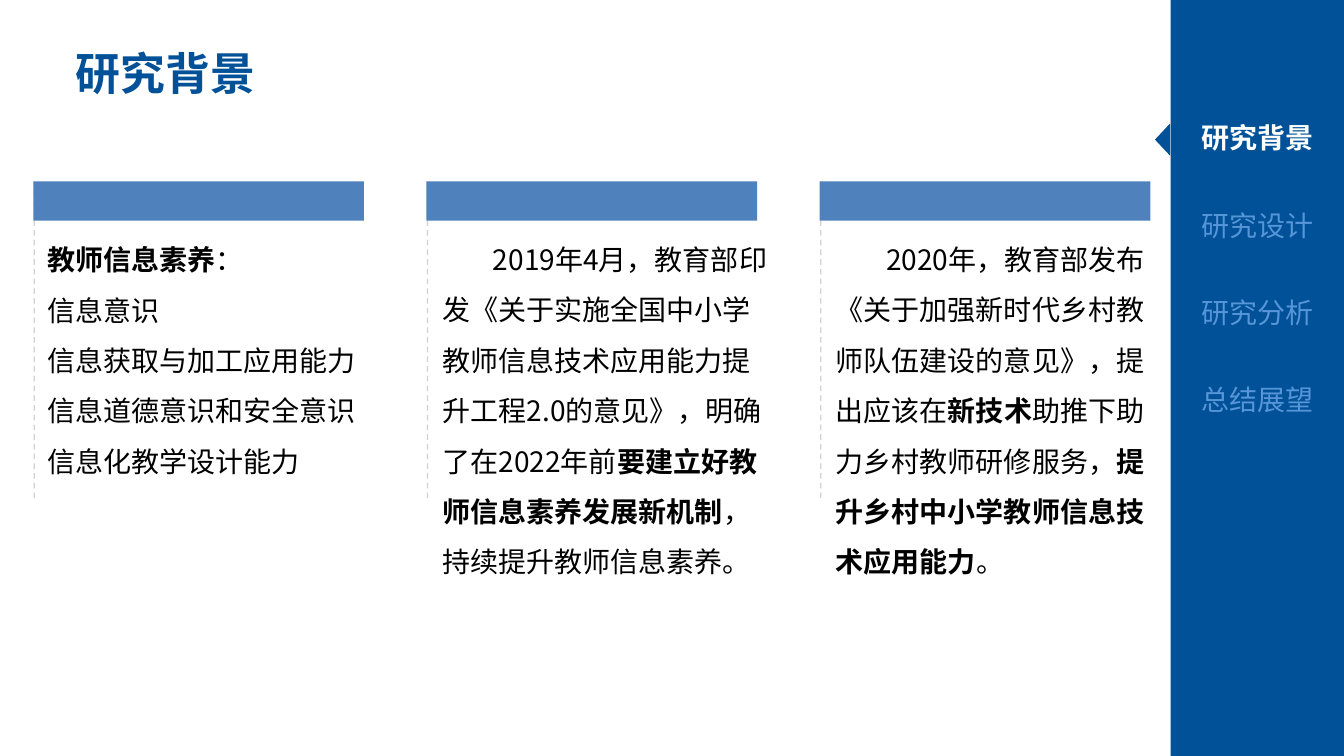
from dataclasses import dataclass

from lxml import etree
from pptx import Presentation
from pptx.dml.color import RGBColor
from pptx.enum.dml import MSO_LINE
from pptx.enum.shapes import MSO_CONNECTOR, MSO_SHAPE
from pptx.enum.text import MSO_ANCHOR, MSO_AUTO_SIZE, PP_ALIGN
from pptx.oxml.ns import qn
from pptx.util import Inches, Pt

RECTANGLE, TRIANGLE = MSO_SHAPE.RECTANGLE, MSO_SHAPE.ISOSCELES_TRIANGLE
STRAIGHT, DASH = MSO_CONNECTOR.STRAIGHT, MSO_LINE.DASH
LEFT, CENTER = PP_ALIGN.LEFT, PP_ALIGN.CENTER
TOP, MIDDLE = MSO_ANCHOR.TOP, MSO_ANCHOR.MIDDLE
NO_FIT = MSO_AUTO_SIZE.NONE


@dataclass(frozen=True)
class Theme:
    font: str = "Noto Sans CJK SC"
    navy: str = "005198"
    header: str = "4F81BD"
    muted: str = "5695D7"
    rule: str = "BFBFBF"
    white: str = "FFFFFF"
    black: str = "000000"
    title_size: int = 32
    body_size: int = 20


THEME = Theme()

SECTIONS = ["研究背景", "研究设计", "研究分析", "总结展望"]
LITERACY = [
    [("教师信息素养", True), ("：", False)],
    [("信息意识", False)],
    [("信息获取与加工应用能力", False)],
    [("信息道德意识和安全意识", False)],
    [("信息化教学设计能力", False)],
]
POLICY_2019 = [[
    ("2019年4月，教育部印发《关于实施全国中小学教师信息技术应用能力提升工程2.0的意见》，明确了在2022年前", False),
    ("要建立好教师信息素养发展新机制", True),
    ("，持续提升教师信息素养。", False),
]]
POLICY_2020 = [[
    ("2020年，教育部发布《关于加强新时代乡村教师队伍建设的意见》，提出应该在", False),
    ("新技术", True),
    ("助推下助力乡村教师研修服务，", False),
    ("提升乡村中小学教师信息技术应用能力", True),
    ("。", False),
]]


def write(frame, paragraphs, size=THEME.body_size, color=THEME.black,
          align=LEFT, anchor=TOP, spacing=1.0, indent=0):
    """Fill a text frame with paragraphs of (text, bold) runs."""
    frame.word_wrap = True
    frame.auto_size = NO_FIT
    frame.vertical_anchor = anchor
    for index, runs in enumerate(paragraphs):
        paragraph = frame.add_paragraph() if index else frame.paragraphs[0]
        properties = paragraph._p.get_or_add_pPr()
        properties.set("marL", "0")
        properties.set("indent", str(Inches(indent)))
        etree.SubElement(properties, qn("a:buNone"))
        paragraph.alignment = align
        paragraph.line_spacing = spacing
        paragraph.space_before = Pt(0)
        for text, bold in runs:
            run = paragraph.add_run()
            run.text = text
            run.font.size = Pt(size)
            run.font.bold = bold
            run.font.color.rgb = RGBColor.from_string(color)
            run.font.name = THEME.font
            east_asian = etree.SubElement(run._r.get_or_add_rPr(), qn("a:ea"))
            east_asian.set("typeface", THEME.font)


class SlideBuilder:
    """Draw themed elements on the current slide."""

    def __init__(self, slide, theme):
        self.slide = slide
        self.theme = theme

    def placeholder(self, index, box, paragraphs, **style):
        holder = self.slide.placeholders[index]
        holder.left, holder.top, holder.width, holder.height = map(Inches, box)
        write(holder.text_frame, paragraphs, **style)

    def text(self, box, paragraphs, **style):
        label = self.slide.shapes.add_textbox(*map(Inches, box))
        write(label.text_frame, paragraphs, **style)

    def block(self, kind, box, color, rotation=0):
        block = self.slide.shapes.add_shape(kind, *map(Inches, box))
        block.shadow.inherit = False
        block.fill.solid()
        block.fill.fore_color.rgb = RGBColor.from_string(color)
        block.line.fill.background()
        block.rotation = rotation

    def dashed_rule(self, x, top, bottom):
        rule = self.slide.shapes.add_connector(
            STRAIGHT, *map(Inches, (x, top, x, bottom)))
        rule.line.width = Pt(1)
        rule.line.dash_style = DASH
        rule.line.color.rgb = RGBColor.from_string(self.theme.rule)
        properties = rule._element.spPr
        color = properties.find(".//" + qn("a:srgbClr"))
        etree.SubElement(color, qn("a:alpha")).set("val", "70000")
        etree.SubElement(properties, qn("a:effectLst"))

    def sidebar(self, sections, active):
        self.block(RECTANGLE, (11.61, 0, 1.72, 7.5), self.theme.navy)
        for index, section in enumerate(sections):
            top = 1.15 + index * 0.865
            current = section == active
            color = self.theme.white if current else self.theme.muted
            if current:
                self.block(TRIANGLE, (11.37, top + 0.16, 0.32, 0.15),
                           self.theme.navy, rotation=270)
            self.text((11.71, top, 1.52, 0.44), [[(section, current)]],
                      color=color, align=CENTER)

    def column_frame(self, left):
        self.dashed_rule(left + 0.01, 1.8, 4.95)
        self.block(RECTANGLE, (left, 1.8, 3.28, 0.39), self.theme.header)


def main():
    deck = Presentation()
    deck.slide_width, deck.slide_height = Inches(13.33), Inches(7.5)
    slide = deck.slides.add_slide(deck.slide_layouts[1])
    builder = SlideBuilder(slide, THEME)

    builder.sidebar(SECTIONS, active=SECTIONS[0])
    builder.placeholder(0, (0.65, 0.38, 5.75, 0.75), [[(SECTIONS[0], True)]],
                        size=THEME.title_size, color=THEME.navy,
                        anchor=MIDDLE, spacing=0.9)
    for column in range(3):
        builder.column_frame(0.33 + column * 3.9)
    builder.placeholder(1, (0.37, 2.19, 3.46, 2.57), LITERACY, spacing=1.5)
    builder.text((4.29, 2.19, 3.45, 4.04), POLICY_2019, spacing=1.5, indent=0.5)
    builder.text((8.19, 2.19, 3.28, 3.58), POLICY_2020, spacing=1.5, indent=0.5)
    deck.save("out.pptx")


if __name__ == "__main__":
    main()
